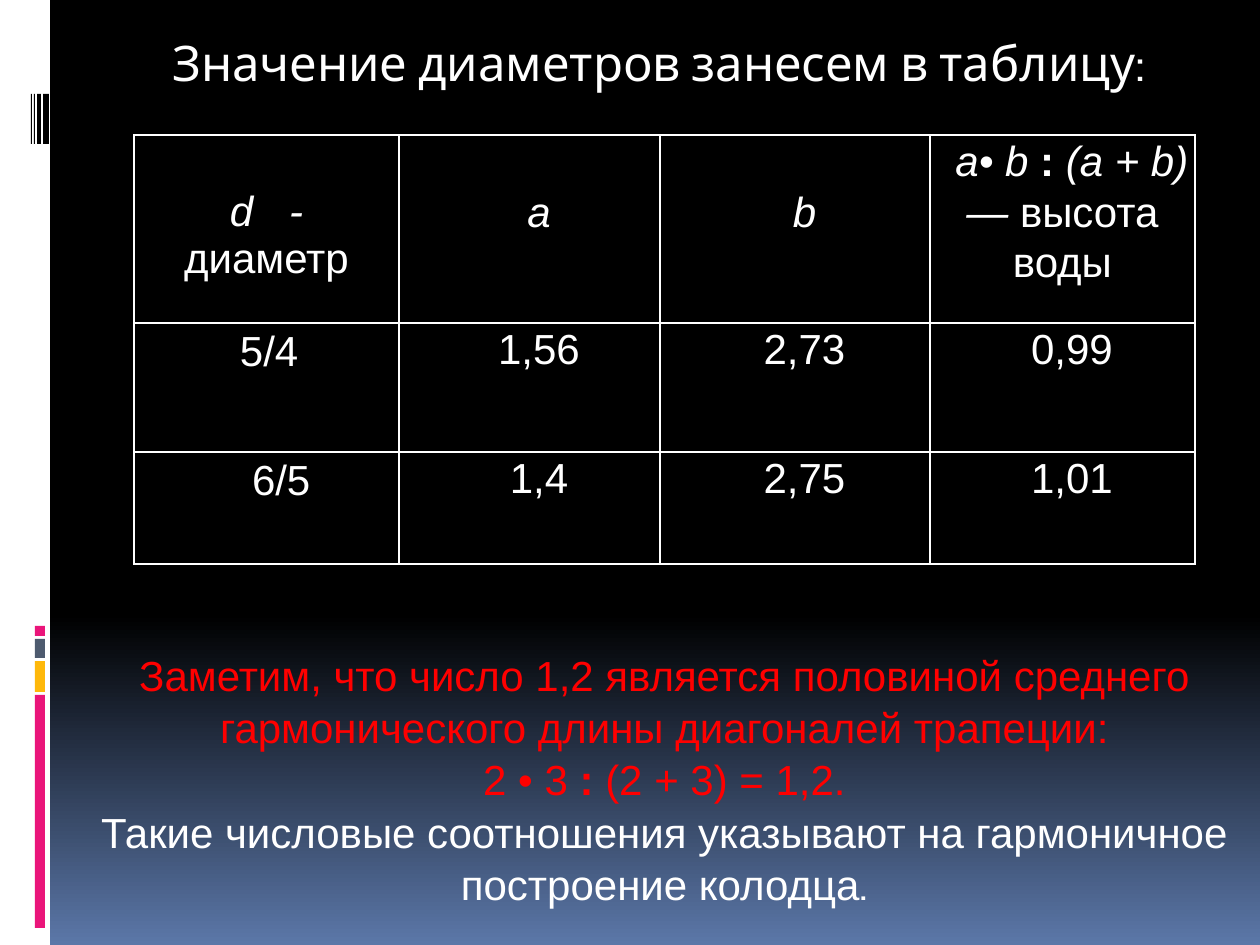
"""Builds the slide with the table of diameters and the note on the harmonic mean."""
from dataclasses import dataclass, field
from typing import Any

from lxml.etree import SubElement
from pptx import Presentation
from pptx.dml.color import RGBColor
from pptx.enum.shapes import MSO_SHAPE
from pptx.enum.text import MSO_ANCHOR, MSO_AUTO_SIZE, PP_ALIGN
from pptx.oxml.ns import qn
from pptx.slide import Slide
from pptx.util import Emu, Pt


@dataclass(frozen=True)
class Theme:
    white: RGBColor = RGBColor(0xFF, 0xFF, 0xFF)
    black: RGBColor = RGBColor(0x00, 0x00, 0x00)
    dusk: RGBColor = RGBColor(0x5B, 0x77, 0xA8)
    pink: RGBColor = RGBColor(0xEA, 0x15, 0x7A)
    amber: RGBColor = RGBColor(0xFE, 0xB8, 0x0A)
    slate: RGBColor = RGBColor(0x4E, 0x5B, 0x6F)
    red: RGBColor = RGBColor(0xFF, 0x00, 0x00)
    heading_font: str = "Cabin"
    body_font: str = "Arial"
    heading_size: Pt = Pt(28)
    body_size: Pt = Pt(24)
    border: Pt = Pt(1)


THEME = Theme()


@dataclass(frozen=True)
class Bar:
    left: int
    top: int
    width: int
    height: int
    color: RGBColor


@dataclass(frozen=True)
class Span:
    text: str
    style: dict[str, Any] = field(default_factory=dict)
    tracking: int = 0


@dataclass(frozen=True)
class Entry:
    spans: tuple[Span, ...]
    top: int = 0
    side: int = 4
    indent: int = 19
    align: PP_ALIGN = PP_ALIGN.CENTER
    line_spacing: float = 1.08


ITALIC = {"italic": True}
BOLD = {"bold": True}

BARCODE_TOP, BARCODE_HEIGHT = 94, 50
BARS = (
    Bar(0, 0, 50, 945, THEME.white),
    Bar(35, 695, 10, 233, THEME.pink),
    Bar(35, 661, 10, 31, THEME.amber),
    Bar(35, 639, 10, 19, THEME.slate),
    Bar(35, 626, 10, 10, THEME.pink),
    *(Bar(left, BARCODE_TOP, width, BARCODE_HEIGHT, THEME.black)
      for left, width in ((43, 6), (37, 4), (34, 1), (31, 1))),
)

COLUMN_WIDTHS = (265, 261, 270, 265)
ROW_HEIGHTS = (188, 129, 112)


def letter(name: str) -> Entry:
    """Return a heading cell for one diagonal part."""
    return Entry((Span(name, ITALIC),), top=51)


def diameter(ratio: str, indent: int) -> Entry:
    """Return a left-aligned cell for a diameter ratio."""
    return Entry((Span(ratio),), 6, 13, indent, PP_ALIGN.LEFT, 1.0)


def measures(*values: str) -> tuple[Entry, ...]:
    """Return the plain value cells of one row."""
    return tuple(Entry((Span(value),)) for value in values)


TABLE_ROWS = (
    (
        Entry((Span("d ", ITALIC, 690), Span("-\v", ITALIC), Span("диаметр")),
              top=54, side=13, indent=-24, line_spacing=1.0),
        letter("a"),
        letter("b"),
        Entry((Span("а• b ", ITALIC), Span(":", BOLD), Span(" (а + b) — ", ITALIC),
               Span("высота воды"))),
    ),
    (diameter("5/4", 93), *measures("1,56", "2,73", "0,99")),
    (diameter("6/5", 105), *measures("1,4", "2,75", "1,01")),
)

RED = {"color": THEME.red}
CONCLUSION = (
    (Span("Заметим, что число 1,2 является половиной среднего "
          "гармонического длины диагоналей трапеции:", RED),),
    (Span("2 • 3 ", RED), Span(": ", RED | BOLD), Span("(2 + 3) = 1,2.", RED)),
    (Span("Такие числовые соотношения указывают на гармоничное построение колодца"),
     Span(".", {"name": THEME.heading_font})),
)


def px(length: int) -> Emu:
    """Turn whole pixels into EMU."""
    return Emu(round(length * 914400 / 126))


def apply(target: Any, values: dict[str, Any]) -> None:
    """Set every named attribute on the target."""
    for name, value in values.items():
        setattr(target, name, value)


def place(left: int, top: int, width: int, height: int) -> tuple[Emu, ...]:
    """Return a box in EMU."""
    return tuple(map(px, (left, top, width, height)))


def write_spans(paragraph: Any, spans: tuple[Span, ...]) -> None:
    """Add formatted runs, breaking the line after a span that ends in a vertical tab."""
    for span in spans:
        run = paragraph.add_run()
        run.text = span.text.rstrip("\v")
        style = {"name": THEME.body_font, "size": THEME.body_size, "bold": False,
                 "color": THEME.white} | span.style
        run.font.color.rgb = style.pop("color")
        apply(run.font, style)
        if span.tracking:
            run._r.get_or_add_rPr().set("spc", str(span.tracking))
        if span.text.endswith("\v"):
            paragraph.add_line_break()


def paint_background(slide: Slide) -> None:
    """Fade the lower third of the background from black to blue."""
    fill = slide.background.fill
    fill.gradient()
    fill.gradient_angle = 270
    for stop, position, color in zip(fill.gradient_stops, (0.65, 1.0),
                                     (THEME.black, THEME.dusk)):
        stop.position = position
        stop.color.rgb = color


def draw_bar(slide: Slide, bar: Bar) -> None:
    """Draw one plain bar of the side strip."""
    shape = slide.shapes.add_shape(
        MSO_SHAPE.RECTANGLE, *place(bar.left, bar.top, bar.width, bar.height))
    shape.shadow.inherit = False
    shape.fill.solid()
    shape.fill.fore_color.rgb = bar.color
    shape.line.fill.background()


def write_heading(slide: Slide) -> None:
    """Place and fill the title."""
    title = slide.shapes.title
    apply(title, dict(zip(("left", "top", "width", "height"), place(99, 26, 1120, 100))))
    apply(title.text_frame, {"vertical_anchor": MSO_ANCHOR.TOP, "word_wrap": True,
                             "auto_size": MSO_AUTO_SIZE.NONE})
    paragraph = title.text_frame.paragraphs[0]
    paragraph.alignment = PP_ALIGN.CENTER
    write_spans(paragraph, (Span("Значение диаметров занесем в таблицу:", {
        "name": THEME.heading_font, "size": THEME.heading_size}),))


def outline_cell(properties: Any) -> None:
    """Add a solid line on all four sides of a cell."""
    for index, side in enumerate(("a:lnL", "a:lnR", "a:lnT", "a:lnB")):
        line = properties.makeelement(qn(side), {"w": str(THEME.border)})
        SubElement(SubElement(line, qn("a:solidFill")), qn("a:srgbClr"),
                   val=str(THEME.white))
        properties.insert(index, line)


def fill_cell(cell: Any, entry: Entry) -> None:
    """Format one cell and write its text."""
    apply(cell, {"margin_left": px(entry.side), "margin_right": px(entry.side),
                 "margin_top": px(entry.top), "margin_bottom": px(0),
                 "vertical_anchor": MSO_ANCHOR.TOP})
    cell.fill.background()
    outline_cell(cell._tc.get_or_add_tcPr())
    paragraph = cell.text_frame.paragraphs[0]
    apply(paragraph, {"alignment": entry.align, "line_spacing": entry.line_spacing})
    apply_indent = paragraph._p.get_or_add_pPr().set
    apply_indent("marL", "0")
    apply_indent("indent", str(px(entry.indent)))
    write_spans(paragraph, entry.spans)


def draw_table(slide: Slide) -> None:
    """Draw the table of diameters."""
    table = slide.shapes.add_table(
        len(ROW_HEIGHTS), len(COLUMN_WIDTHS),
        *place(134, 135, sum(COLUMN_WIDTHS), sum(ROW_HEIGHTS))).table
    apply(table, {"first_row": False, "horz_banding": False})
    for column, width in zip(table.columns, COLUMN_WIDTHS):
        column.width = px(width)
    for row, height, entries in zip(table.rows, ROW_HEIGHTS, TABLE_ROWS):
        row.height = px(height)
        for cell, entry in zip(row.cells, entries):
            fill_cell(cell, entry)


def write_conclusion(slide: Slide) -> None:
    """Write the closing note under the table."""
    frame = slide.shapes.add_textbox(*place(79, 641, 1171, 267)).text_frame
    frame.word_wrap = True
    for index, spans in enumerate(CONCLUSION):
        paragraph = frame.add_paragraph() if index else frame.paragraphs[0]
        apply(paragraph, {"alignment": PP_ALIGN.CENTER, "line_spacing": 1.04})
        write_spans(paragraph, spans)


def main() -> None:
    """Build and save the slide."""
    deck = Presentation()
    apply(deck, {"slide_width": px(1260), "slide_height": px(945)})
    slide = deck.slides.add_slide(deck.slide_layouts[5])
    paint_background(slide)
    for bar in BARS:
        draw_bar(slide, bar)
    write_heading(slide)
    draw_table(slide)
    write_conclusion(slide)
    deck.save("out.pptx")


if __name__ == "__main__":
    main()
